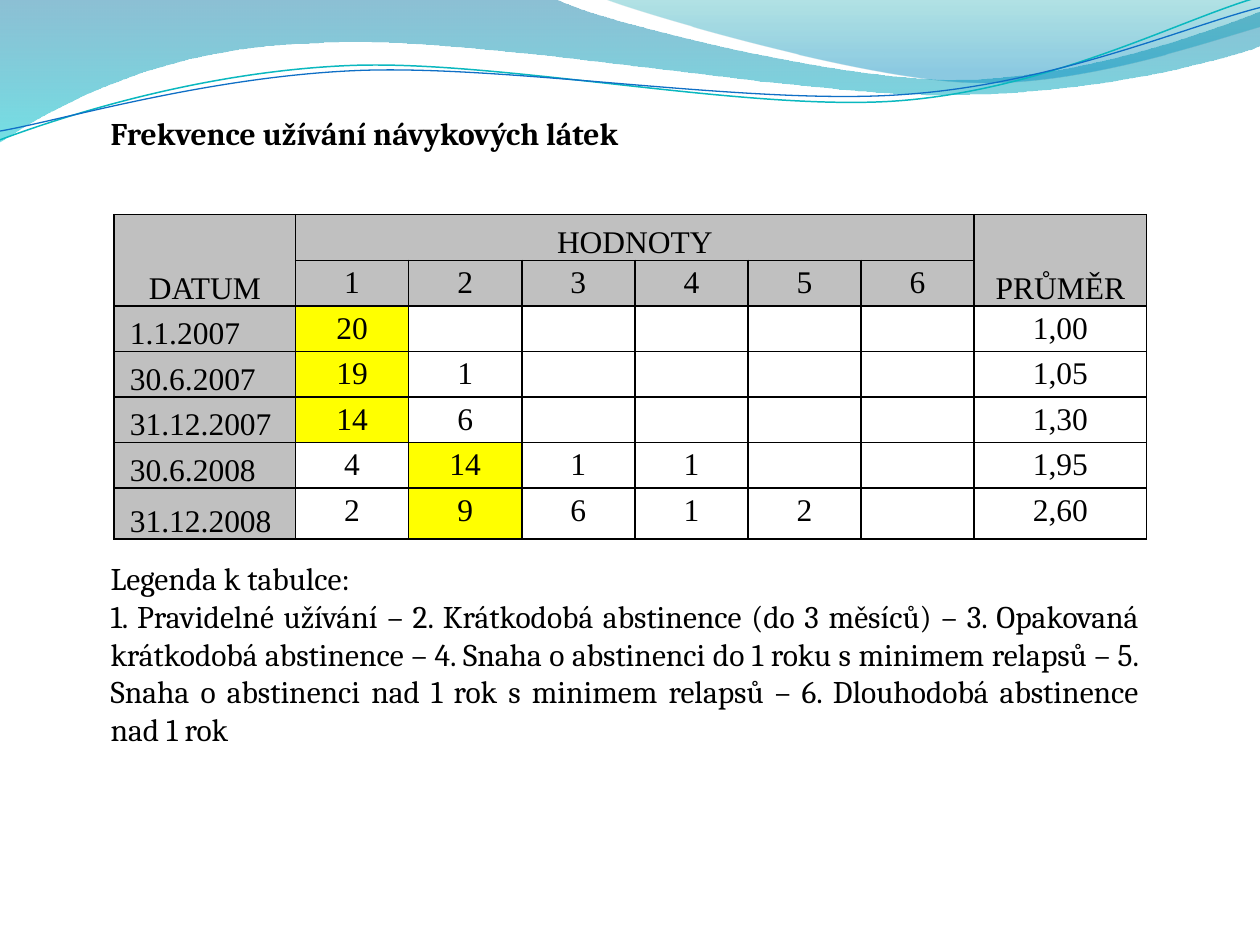
import math
from dataclasses import dataclass

from lxml import etree
from pptx import Presentation
from pptx import util as u
from pptx.dml import color
from pptx.enum import text
from pptx.oxml import ns

GRID_COLUMNS, GRID_ROWS = 100, 75
CELL = u.Inches(0.1)
COLORS = {
    "text": "000000",
    "header": "C0C0C0",
    "highlight": "FFFF00",
    "deep blue": "0074A1",
    "cyan": "00C6CF",
    "teal": "00A1A9",
    "blue": "008BBF",
    "teal line": "0AB8BF",
    "blue line": "0F6FC6",
}
Point = tuple[float, float]


@dataclass
class Stop:
    position: float
    color: str
    opacity: int


@dataclass
class Wave:
    start: Point
    segments: list[list[Point]]
    stops: tuple[Stop, ...] = ()
    line: str = ""
    line_width: float = 0
    rotation: float = 0
    pivot: Point = (49.9, 5.8)


@dataclass
class TextBlock:
    left: float
    top: float
    width: float
    height: float
    paragraphs: list[str]
    bold: bool = False
    alignment: text.PP_ALIGN = text.PP_ALIGN.LEFT
    anchor: text.MSO_ANCHOR = text.MSO_ANCHOR.TOP


@dataclass
class Record:
    date: str
    counts: list[str]
    average: str
    highlighted: int


WAVES = [
    Wave((0, 0), [
        [(44, -0.1)],
        [(47.6, 1.7), (66.4, 6.3), (75.8, 6.3)],
        [(85.3, 6.3), (95.8, 2.6), (100, 0.9)],
        [(100.1, 3.6)],
        [(98.3, 4.4), (87, 7.6), (74.6, 7.5)],
        [(62.2, 7.5), (38.2, 2.8), (25.7, 3.4)],
        [(12.9, 3.6), (4.6, 8.3), (-0.1, 11.3)],
        [(0, 0)],
    ], (Stop(0, "deep blue", 45), Stop(1, "cyan", 55))),
    Wave((47.9, -0.1), [
        [(50.9, 1.1), (68.2, 6.2), (76.9, 6.5)],
        [(85.6, 6.9), (96.1, 3.2), (100, 2.1)],
        [(100, 0)],
        [(47.9, -0.1)],
    ], (Stop(0, "teal", 30), Stop(0.8, "blue", 45))),
    Wave((0, 11.1), [
        [(4.8, 9.3), (15.8, 5.7), (27.7, 5.2)],
        [(39.5, 4.7), (59.3, 8.9), (71.3, 8)],
        [(83.3, 7.1), (93.8, 1.5), (99.8, -0.2)],
    ], line="teal line", line_width=0.85, rotation=-2.7),
    Wave((0, 10.4), [
        [(4.7, 9.6), (16.4, 6.1), (28.3, 5.6)],
        [(40.3, 5.1), (59.7, 8.4), (71.7, 7.5)],
        [(83.6, 6.7), (94.1, 2.1), (100, 0.6)],
    ], line="blue line", line_width=0.75, rotation=-2.7),
]
TEXT_BLOCKS = [
    TextBlock(7.8, 8.6, 82.8, 4, ["Frekvence užívání návykových látek"], bold=True),
    TextBlock(7.8, 43.76, 83.6, 16.2, [
        "Legenda k tabulce:",
        "1. Pravidelné užívání – 2. Krátkodobá abstinence (do 3 měsíců) – "
        "3. Opakovaná krátkodobá abstinence – 4. Snaha o abstinenci do 1 roku "
        "s minimem relapsů – 5. Snaha o abstinenci nad 1 rok s minimem relapsů – "
        "6. Dlouhodobá abstinence nad 1 rok",
    ], alignment=text.PP_ALIGN.JUSTIFY, anchor=text.MSO_ANCHOR.MIDDLE),
]
RECORDS = [
    Record("1.1.2007", ["20"], "1,00", 1),
    Record("30.6.2007", ["19", "1"], "1,05", 1),
    Record("31.12.2007", ["14", "6"], "1,30", 1),
    Record("30.6.2008", ["4", "14", "1", "1"], "1,95", 2),
    Record("31.12.2008", ["2", "9", "6", "1", "2"], "2,60", 2),
]
VALUE_COUNT = 6
COLUMN_WIDTHS = [14.4] + [8.98] * VALUE_COUNT + [13.7]
ROW_HEIGHTS = [3.62] * 6 + [4.04]


def cells(count: float) -> int:
    return round(count * CELL)


def rgb(name: str) -> color.RGBColor:
    return color.RGBColor.from_string(COLORS[name])


def level(point: Point, wave: Wave) -> tuple[int, int]:
    angle = math.radians(-wave.rotation)
    x, y = (value - center for value, center in zip(point, wave.pivot))
    return (
        cells(wave.pivot[0] + x * math.cos(angle) - y * math.sin(angle)),
        cells(wave.pivot[1] + x * math.sin(angle) + y * math.cos(angle)),
    )


def bend(shape, segments: list[list[Point]]) -> None:
    lines = iter(list(shape.element.iter(ns.qn("a:lnTo"))))
    for controls in segments:
        first, *others = [next(lines) for _ in controls]
        if others:
            first.tag = ns.qn("a:cubicBezTo")
        for line in others:
            first.append(line[0])
            line.getparent().remove(line)


def draw_wave(slide, wave: Wave) -> None:
    points = [level(point, wave) for controls in wave.segments for point in controls]
    builder = slide.shapes.build_freeform(*level(wave.start, wave))
    builder.add_line_segments(points, close=bool(wave.stops))
    shape = builder.convert_to_shape()
    bend(shape, wave.segments)
    shape.rotation = wave.rotation
    shape.shadow.inherit = False
    if wave.line:
        shape.fill.background()
        shape.line.color.rgb = rgb(wave.line)
        shape.line.width = u.Pt(wave.line_width)
        return
    shape.line.fill.background()
    shape.fill.gradient()
    shape.fill.gradient_angle = 270
    for target, stop in zip(shape.fill.gradient_stops, wave.stops):
        target.position = stop.position
        target.color.rgb = rgb(stop.color)
    for element, stop in zip(shape.element.iter(ns.qn("a:srgbClr")), wave.stops):
        etree.SubElement(element, ns.qn("a:alpha"), val=str(stop.opacity * 1000))


def style_paragraph(paragraph, font: str, alignment: text.PP_ALIGN, bold: bool = False) -> None:
    paragraph.alignment = alignment
    paragraph.font.name = font
    paragraph.font.size = u.Pt(18)
    paragraph.font.bold = bold
    paragraph.font.color.rgb = rgb("text")


def draw_text(slide, block: TextBlock) -> None:
    box = slide.shapes.add_textbox(*map(cells, (block.left, block.top, block.width, block.height)))
    frame = box.text_frame
    frame.word_wrap = True
    frame.auto_size = text.MSO_AUTO_SIZE.SHAPE_TO_FIT_TEXT
    frame.vertical_anchor = block.anchor
    frame.text = "\n".join(block.paragraphs)
    for paragraph in frame.paragraphs:
        style_paragraph(paragraph, "Cambria", block.alignment, block.bold)


def draw_cell(cell, content: str, fill: str, bottom: bool, dated: bool) -> None:
    properties = cell._tc.get_or_add_tcPr()
    for side in ("lnL", "lnR", "lnT", "lnB"):
        border = etree.SubElement(properties, ns.qn(f"a:{side}"), w=str(u.Pt(1)))
        solid = etree.SubElement(border, ns.qn("a:solidFill"))
        etree.SubElement(solid, ns.qn("a:srgbClr"), val=COLORS["text"])
    if fill:
        cell.fill.solid()
        cell.fill.fore_color.rgb = rgb(fill)
    else:
        cell.fill.background()
    cell.margin_left = cells(1.25) if dated else 0
    cell.margin_right = cell.margin_top = cell.margin_bottom = 0
    cell.vertical_anchor = text.MSO_ANCHOR.BOTTOM if bottom else text.MSO_ANCHOR.TOP
    cell.text = content
    paragraph = cell.text_frame.paragraphs[0]
    style_paragraph(paragraph, "Times New Roman", text.PP_ALIGN.LEFT if dated else text.PP_ALIGN.CENTER)
    paragraph.line_spacing = 1.15


def draw_table(slide) -> None:
    last = VALUE_COUNT + 1
    rows = [
        ["DATUM", "HODNOTY"] + [""] * (VALUE_COUNT - 1) + ["PRŮMĚR"],
        ["", *map(str, range(1, last)), ""],
    ]
    for record in RECORDS:
        blanks = [""] * (VALUE_COUNT - len(record.counts))
        rows.append([record.date, *record.counts, *blanks, record.average])
    size = map(cells, (9.06, 17.04, sum(COLUMN_WIDTHS), sum(ROW_HEIGHTS)))
    table = slide.shapes.add_table(len(rows), last + 1, *size).table
    table.first_row = table.horz_banding = False
    for column, width in zip(table.columns, COLUMN_WIDTHS):
        column.width = cells(width)
    for r, (row, height) in enumerate(zip(rows, ROW_HEIGHTS)):
        table.rows[r].height = cells(height)
        for c, content in enumerate(row):
            highlighted = r > 1 and c == RECORDS[r - 2].highlighted
            fill = "header" if r < 2 or c == 0 else "highlight" if highlighted else ""
            draw_cell(table.cell(r, c), content, fill, r == 0 or c == 0, r > 1 and c == 0)
    for first, end in (((0, 0), (1, 0)), ((0, 1), (0, VALUE_COUNT)), ((0, last), (1, last))):
        table.cell(*first).merge(table.cell(*end))


def main() -> None:
    presentation = Presentation()
    presentation.slide_width = cells(GRID_COLUMNS)
    presentation.slide_height = cells(GRID_ROWS)
    slide = presentation.slides.add_slide(presentation.slide_layouts[6])
    for wave in WAVES:
        draw_wave(slide, wave)
    draw_table(slide)
    for block in TEXT_BLOCKS:
        draw_text(slide, block)
    presentation.save("out.pptx")


if __name__ == "__main__":
    main()
